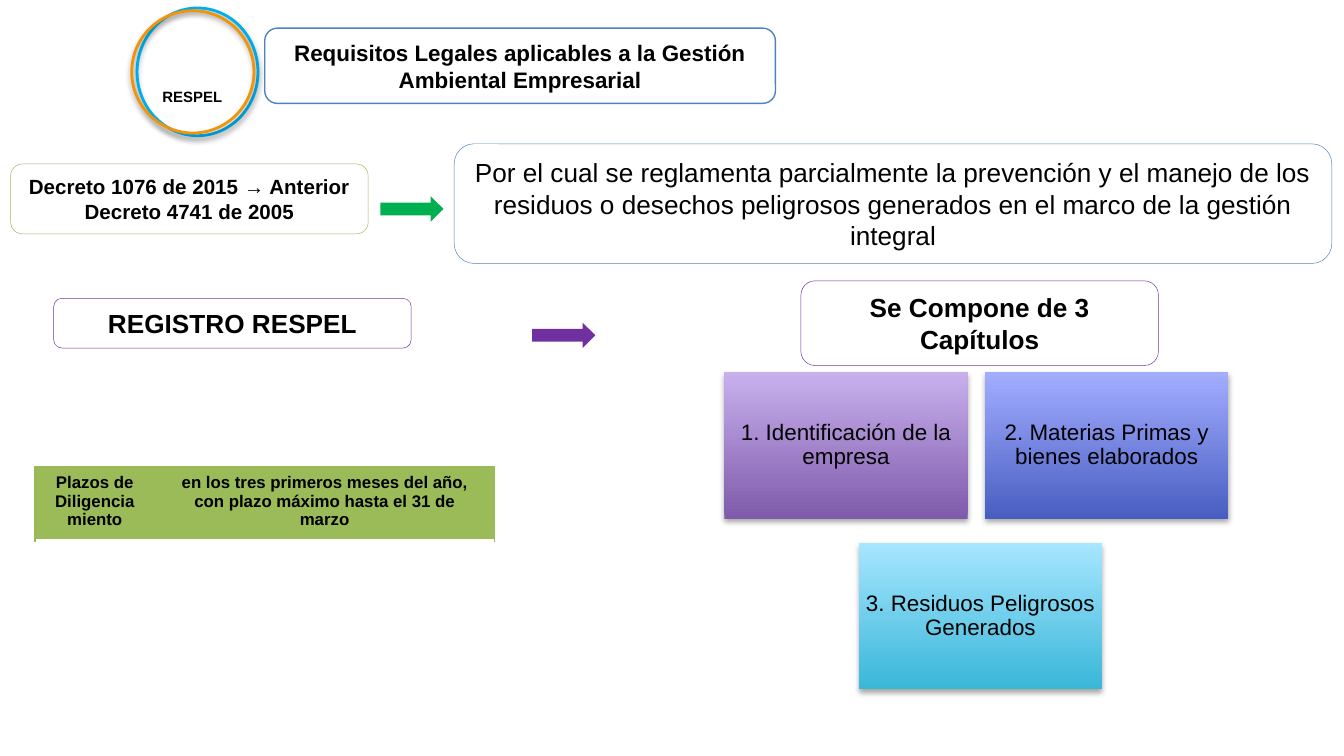
"""Build the slide on the RESPEL register and its legal requirements."""
from dataclasses import dataclass

from lxml import etree
from pptx import Presentation
from pptx.dml.color import RGBColor
from pptx.enum.shapes import MSO_SHAPE
from pptx.enum.text import MSO_ANCHOR, PP_ALIGN
from pptx.oxml import parse_xml
from pptx.oxml.ns import nsdecls, qn
from pptx.util import Inches, Pt

OVAL, RECTANGLE = MSO_SHAPE.OVAL, MSO_SHAPE.RECTANGLE
ROUNDED, ARROW = MSO_SHAPE.ROUNDED_RECTANGLE, MSO_SHAPE.RIGHT_ARROW
CENTER, LEFT, MIDDLE = PP_ALIGN.CENTER, PP_ALIGN.LEFT, MSO_ANCHOR.MIDDLE


@dataclass(frozen=True)
class Theme:
    font: str = "Arial"
    ink: str = "000000"
    white: str = "FFFFFF"
    blue: str = "4F81BD"
    cyan: str = "00B0F0"
    orange: str = "F19408"
    olive: str = "9BBB59"
    olive_line: str = "98B955"
    green: str = "00B050"
    purple: str = "7030A0"
    chapters: tuple = (("7F5BAB", "C8B0ED"), ("495EC2", "A2ADFF"), ("39B7D8", "A7E6FF"))
    tiny: int = 8
    small: int = 9
    medium: int = 11
    body: int = 12
    large: int = 14


THEME = Theme()


def add_figure(kind, place, fill=None, line=None, width=0.25, shadow=False):
    figure = page.shapes.add_shape(kind, *map(Inches, place))
    figure.shadow.inherit = False
    if fill:
        figure.fill.solid()
        figure.fill.fore_color.rgb = RGBColor.from_string(fill)
    else:
        figure.fill.background()
    if line:
        figure.line.color.rgb = RGBColor.from_string(line)
        figure.line.width = Pt(width)
    else:
        figure.line.fill.background()
    if shadow:
        effects = figure._element.spPr.find(qn("a:effectLst"))
        effects.append(parse_xml(
            f'<a:outerShdw {nsdecls("a")} blurRad="{Pt(3.1)}" dist="{Pt(1.8)}" '
            f'dir="5400000" rotWithShape="0"><a:srgbClr val="{THEME.ink}">'
            '<a:alpha val="35000"/></a:srgbClr></a:outerShdw>'))
    return figure


def write(frame, text, size, bold=True, align=CENTER):
    frame.text = text
    frame.word_wrap = True
    para = frame.paragraphs[0]
    para.alignment = align
    font = para.runs[0].font
    font.name, font.size, font.bold = THEME.font, Pt(size), bold
    font.color.rgb = RGBColor.from_string(THEME.ink)


deck = Presentation()
deck.slide_width, deck.slide_height = Inches(10), Inches(10 * 9 / 16)
page = deck.slides.add_slide(deck.slide_layouts[6])

add_figure(OVAL, (1.02, 0.06, 0.9, 0.95), line=THEME.cyan, width=1.5, shadow=True)
add_figure(OVAL, (0.98, 0.08, 0.91, 0.91), line=THEME.orange, width=1.5, shadow=True)
label = page.shapes.add_textbox(Inches(1.11), Inches(0.6), Inches(0.71), Inches(0.24))
write(label.text_frame, "RESPEL", THEME.tiny, align=LEFT)

panels = [
    ((1.97, 0.21, 3.8, 0.56), None, THEME.blue, 0.75, THEME.body, True,
     "Requisitos Legales aplicables a la Gestión Ambiental Empresarial"),
    ((0.08, 1.22, 2.66, 0.52), THEME.white, THEME.olive, 0.25, THEME.medium, True,
     "Decreto 1076 de 2015 → Anterior Decreto 4741 de 2005"),
    ((3.38, 1.07, 6.53, 0.89), THEME.white, THEME.blue, 0.25, THEME.large, False,
     "Por el cual se reglamenta parcialmente la prevención y el manejo de los residuos "
     "o desechos peligrosos generados en el marco de la gestión integral"),
    ((0.4, 2.22, 2.66, 0.37), THEME.white, THEME.purple, 0.25, THEME.large, True,
     "REGISTRO RESPEL"),
    ((5.96, 2.09, 2.66, 0.63), THEME.white, THEME.purple, 0.25, THEME.large, True,
     "Se Compone de 3 Capítulos"),
]
for place, fill, line, width, size, bold, text in panels:
    panel = add_figure(ROUNDED, place, fill, line, width)
    panel.text_frame.vertical_anchor = MIDDLE
    write(panel.text_frame, text, size, bold)

for left, top, color in ((2.83, 1.46, THEME.green), (3.96, 2.4, THEME.purple)):
    add_figure(ARROW, (left, top, 0.47, 0.19), color)

chapters = [
    (5.39, 2.77, "1. Identificación de la empresa"),
    (7.33, 2.77, "2. Materias Primas y bienes elaborados"),
    (6.39, 4.04, "3. Residuos Peligrosos Generados"),
]
for (left, top, text), colors in zip(chapters, THEME.chapters):
    chapter = add_figure(RECTANGLE, (left, top, 1.81, 1.09), shadow=True)
    chapter.fill.gradient()
    chapter.fill.gradient_angle = 90
    for stop, color in zip(chapter.fill.gradient_stops, colors):
        stop.color.rgb = RGBColor.from_string(color)
    frame = chapter.text_frame
    frame.margin_left = frame.margin_right = Inches(0.05)
    frame.margin_top = frame.margin_bottom = Inches(0.05)
    frame.vertical_anchor = MIDDLE
    write(frame, text, THEME.body, bold=False)
    frame.paragraphs[0].line_spacing = 0.9

table = page.shapes.add_table(
    1, 2, Inches(0.26), Inches(3.47), Inches(3.42), Inches(0.55)).table
deadlines = [
    (0.89, "Plazos de Diligenciamiento", (THEME.olive_line, None)),
    (2.53, "en los tres primeros meses del año, con plazo máximo hasta el 31 de marzo",
     (None, THEME.olive_line)),
]
for index, (width, text, (left_line, right_line)) in enumerate(deadlines):
    table.columns[index].width = Inches(width)
    cell = table.cell(0, index)
    write(cell.text_frame, text, THEME.small)
    cell.fill.solid()
    cell.fill.fore_color.rgb = RGBColor.from_string(THEME.olive)
    borders = [("L", left_line, 0.75), ("R", right_line, 0.75),
               ("T", THEME.olive_line, 0.75), ("B", THEME.white, 2)]
    for position, (side, color, weight) in enumerate(borders):
        border = etree.Element(qn(f"a:ln{side}"), w=str(Pt(weight)))
        if color:
            solid = etree.SubElement(border, qn("a:solidFill"))
            etree.SubElement(solid, qn("a:srgbClr"), val=color)
        else:
            etree.SubElement(border, qn("a:noFill"))
        cell._tc.tcPr.insert(position, border)

deck.save("out.pptx")
